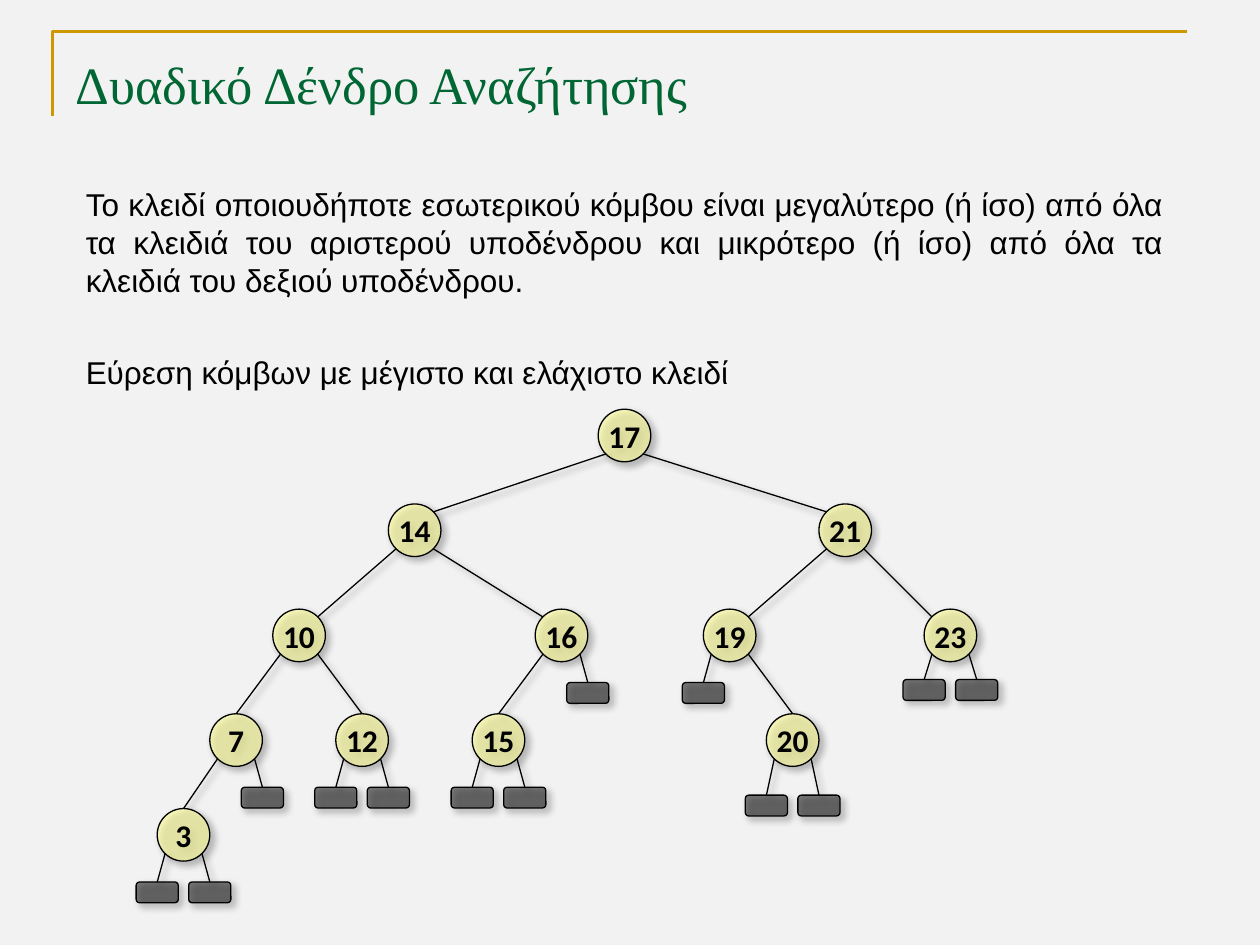
from dataclasses import dataclass
from typing import Optional

from lxml.etree import SubElement
from pptx import Presentation
from pptx.dml.color import RGBColor
from pptx.enum.shapes import MSO_CONNECTOR, MSO_SHAPE
from pptx.enum.text import MSO_ANCHOR, PP_ALIGN
from pptx.oxml.ns import qn
from pptx.util import Cm, Pt

BACKGROUND = RGBColor(0xF2, 0xF2, 0xF2)
GOLD = RGBColor(0xCC, 0x99, 0x00)
GREEN = RGBColor(0x00, 0x66, 0x33)
YELLOW = RGBColor(0xFF, 0xFF, 0x99)
BLACK = RGBColor(0x00, 0x00, 0x00)

LEVELS = [8.78, 10.69, 12.81, 14.92, 16.83]  # node centres, top to bottom
RADIUS = 0.53
DIAGONAL = 0.37  # offset of the 45° point on a node's edge
LEAF_WIDTH, LEAF_HEIGHT = 0.85, 0.42


@dataclass
class Node:
    """A key with its horizontal centre; a missing child is an empty leaf."""
    key: int
    x: float
    left: Optional["Node"] = None
    right: Optional["Node"] = None
    leaf_drop: float = 0.95


TREE = Node(
    17, 12.59,
    Node(14, 8.36,
         Node(10, 6.03, Node(7, 4.76, Node(3, 3.70)), Node(12, 7.30)),
         Node(16, 11.32, Node(15, 10.05))),
    Node(21, 17.04,
         Node(19, 14.71, None, Node(20, 15.98, leaf_drop=1.11)),
         Node(23, 19.16, leaf_drop=0.89)))


class TreeSlide:
    def __init__(self, presentation):
        self.slide = presentation.slides.add_slide(presentation.slide_layouts[6])
        self.shapes = self.slide.shapes
        fill = self.slide.background.fill
        fill.solid()
        fill.fore_color.rgb = BACKGROUND

    def set_alpha(self, color, percent):
        SubElement(color, qn("a:alpha"), val=str(percent * 1000))

    def style_outline(self, shape):
        """Thin black line and a soft shadow to the lower right."""
        shape.line.color.rgb = BLACK
        shape.line.width = Pt(0.75)
        effects = SubElement(shape._element.spPr, qn("a:effectLst"))
        shadow = SubElement(effects, qn("a:outerShdw"), blurRad=str(Pt(4)),
                            dist=str(Pt(3)), dir="2700000", algn="tl", rotWithShape="0")
        self.set_alpha(SubElement(shadow, qn("a:srgbClr"), val=str(BLACK)), 40)

    def add_frame(self, left, top, right, bottom):
        builder = self.shapes.build_freeform(Cm(left), Cm(bottom))
        builder.add_line_segments([(Cm(left), Cm(top)), (Cm(right), Cm(top))], close=False)
        frame = builder.convert_to_shape()
        frame.fill.background()
        frame.line.color.rgb = GOLD
        frame.line.width = Pt(1.5)
        frame.shadow.inherit = False

    def add_text(self, text, left, top, width, height, size=18, font="Arial",
                 color=BLACK, align=PP_ALIGN.LEFT, wrap=True, margin_top=0.13):
        box = self.shapes.add_textbox(Cm(left), Cm(top), Cm(width), Cm(height))
        frame = box.text_frame
        frame.word_wrap = wrap
        frame.margin_top = Cm(margin_top)
        self.fill_paragraph(frame.paragraphs[0], text, size, font, color, align)

    def fill_paragraph(self, paragraph, text, size, font, color, align, bold=False):
        paragraph.text = text
        paragraph.alignment = align
        paragraph.font.size = Pt(size)
        paragraph.font.name = font
        paragraph.font.bold = bold
        paragraph.font.color.rgb = color

    def add_filled(self, kind, left, top, width, height, color, alpha):
        shape = self.shapes.add_shape(kind, Cm(left), Cm(top), Cm(width), Cm(height))
        shape.fill.solid()
        shape.fill.fore_color.rgb = color
        self.set_alpha(shape._element.spPr.find(qn("a:solidFill"))[0], alpha)
        self.style_outline(shape)
        return shape

    def add_edge(self, x1, y1, x2, y2):
        edge = self.shapes.add_connector(MSO_CONNECTOR.STRAIGHT, Cm(x1), Cm(y1), Cm(x2), Cm(y2))
        self.style_outline(edge)

    def add_node(self, key, x, y):
        circle = self.add_filled(MSO_SHAPE.OVAL, x - RADIUS, y - RADIUS,
                                 2 * RADIUS, 2 * RADIUS, YELLOW, 60)
        frame = circle.text_frame
        frame.word_wrap = False
        frame.vertical_anchor = MSO_ANCHOR.MIDDLE
        self.fill_paragraph(frame.paragraphs[0], str(key), 18, "Calibri", BLACK,
                            PP_ALIGN.CENTER, bold=True)

    def add_leaf(self, x, top):
        self.add_filled(MSO_SHAPE.ROUNDED_RECTANGLE, x - LEAF_WIDTH / 2, top,
                        LEAF_WIDTH, LEAF_HEIGHT, BLACK, 50)

    def add_tree(self, node, depth=0):
        y = LEVELS[depth]
        self.add_node(node.key, node.x, y)
        for side, child in ((-1, node.left), (1, node.right)):
            start = node.x + side * DIAGONAL, y + DIAGONAL
            if child is None:
                leaf_x, leaf_top = node.x + side * RADIUS, y + node.leaf_drop
                self.add_leaf(leaf_x, leaf_top)
                self.add_edge(leaf_x, leaf_top, *start)
                continue
            child_y = LEVELS[depth + 1]
            if depth < 2:
                end = child.x - side * DIAGONAL, child_y - DIAGONAL
            else:
                end = child.x, child_y - RADIUS
            self.add_edge(*start, *end)
            self.add_tree(child, depth + 1)


def main():
    presentation = Presentation()
    presentation.slide_width = Cm(25.4)
    presentation.slide_height = Cm(19.05)
    slide = TreeSlide(presentation)
    slide.add_frame(1.06, 0.64, 23.92, 2.33)
    slide.add_text("Δυαδικό Δένδρο Αναζήτησης", 1.27, 0.76, 22.86, 1.35, size=30,
                   font="Times New Roman", color=GREEN, margin_top=0.28)
    slide.add_text("Το κλειδί οποιουδήποτε εσωτερικού κόμβου είναι μεγαλύτερο (ή ίσο) "
                   "από όλα τα κλειδιά του αριστερού υποδένδρου και μικρότερο (ή ίσο) "
                   "από όλα τα κλειδιά του δεξιού υποδένδρου.",
                   1.48, 3.6, 22.22, 2.56, align=PP_ALIGN.JUSTIFY)
    slide.add_text("Εύρεση κόμβων με μέγιστο και ελάχιστο κλειδί",
                   1.48, 6.99, 13.59, 1.02, wrap=False)
    slide.add_tree(TREE)
    presentation.save("out.pptx")


if __name__ == "__main__":
    main()
